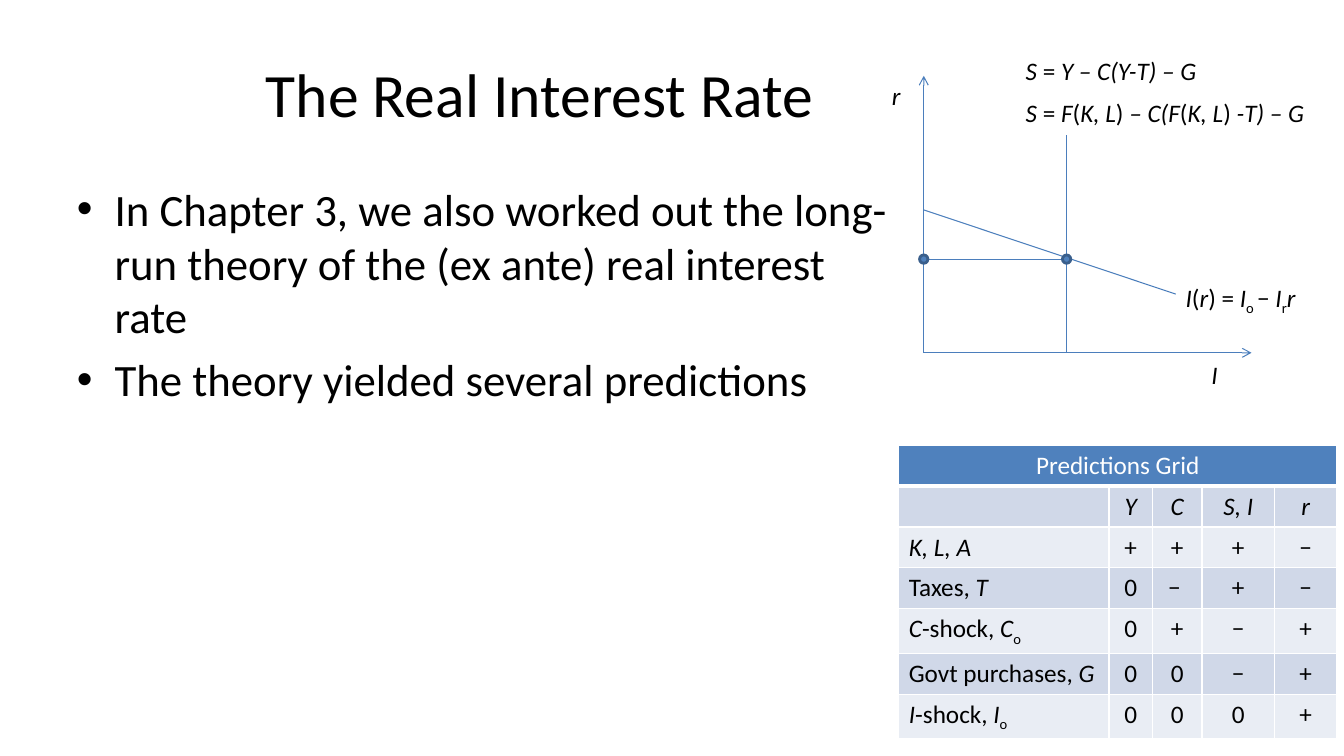
import pptx
import pptx.dml.color
import pptx.enum.shapes
import pptx.enum.text
import pptx.oxml
import pptx.oxml.ns
import pptx.util
from dataclasses import dataclass

Cm = pptx.util.Cm
Pt = pptx.util.Pt
Align = pptx.enum.text.PP_ALIGN
Anchor = pptx.enum.text.MSO_ANCHOR
NS = pptx.oxml.ns.nsdecls("a")


@dataclass(frozen=True)
class Theme:
    font: str = "Calibri"
    title: int = 44
    body: int = 32
    label: int = 18
    ink: str = "000000"
    white: str = "FFFFFF"
    line: str = "4B7EBC"
    fill: str = "4F81BD"
    edge: str = "3A5F8C"
    bands: tuple = ("D0D8E8", "E9EDF4")


theme = Theme()
rgb = pptx.dml.color.RGBColor.from_string


def write(para, text, size=theme.label, color=theme.ink, align=Align.LEFT):
    """Fill a paragraph; * switches italics and _ switches subscript."""
    para.alignment = align
    para.font.name = theme.font
    para.font.size = Pt(size)
    para.font.bold = False
    para.font.color.rgb = rgb(color)
    for i, part in enumerate(text.split("*")):
        for j, piece in enumerate(part.split("_")):
            if piece:
                run = para.add_run()
                run.text = piece
                if i % 2:
                    run.font.italic = True
                if j % 2:
                    run._r.get_or_add_rPr().set("baseline", "-25000")


def add_box(left, top, width, height):
    box = slide.shapes.add_textbox(Cm(left), Cm(top), Cm(width), Cm(height))
    box.text_frame.word_wrap = True
    return box.text_frame


deck = pptx.Presentation()
deck.slide_width, deck.slide_height = Cm(33.87), Cm(19.05)
slide = deck.slides.add_slide(deck.slide_layouts[6])

# Title
frame = add_box(1.69, 0.76, 23.83, 3.18)
frame.vertical_anchor = Anchor.MIDDLE
write(frame.paragraphs[0], "The Real Interest Rate", theme.title, align=Align.CENTER)

# Bullets
points = [
    "In Chapter 3, we also worked out the long-run theory of the (ex ante) real interest rate",
    "The theory yielded several predictions",
]
frame = add_box(1.69, 4.45, 20.96, 12.57)
for i, point in enumerate(points):
    para = frame.add_paragraph() if i else frame.paragraphs[0]
    write(para, point, theme.body)
    para.space_before = Pt(theme.body * 0.2)
    props = para._p.get_or_add_pPr()
    props.set("marL", str(Cm(0.95)))
    props.set("indent", str(Cm(-0.95)))
    props.find(pptx.oxml.ns.qn("a:defRPr")).addprevious(
        pptx.oxml.parse_xml(f'<a:buChar {NS} char="•"/>'))
    props.find(pptx.oxml.ns.qn("a:buChar")).addprevious(
        pptx.oxml.parse_xml(f'<a:buFont {NS} typeface="Arial"/>'))

# Graph lines: axes, investment, saving, market rate
left, base = 23.28, 8.89
save, rate = 26.88, 6.53
lines = [
    (left, base, 31.54, base, True),
    (left, base, left, 1.91, True),
    (left, 5.29, 29.63, 7.41, False),
    (save, base, save, 3.39, False),
    (save, rate, left, rate, False),
]
for x1, y1, x2, y2, arrow in lines:
    line = slide.shapes.add_connector(
        pptx.enum.shapes.MSO_CONNECTOR.STRAIGHT, Cm(x1), Cm(y1), Cm(x2), Cm(y2))
    line.line.color.rgb = rgb(theme.line)
    line.line.width = Pt(0.75)
    props = line._element.spPr
    if arrow:
        props.find(pptx.oxml.ns.qn("a:ln")).append(
            pptx.oxml.parse_xml(f'<a:tailEnd {NS} type="arrow"/>'))
    props.append(pptx.oxml.parse_xml(f"<a:effectLst {NS}/>"))

# Graph points
size = 0.21
for x in (left, save):
    dot = slide.shapes.add_shape(
        pptx.enum.shapes.MSO_SHAPE.OVAL,
        Cm(x - size / 2), Cm(rate - size / 2), Cm(size), Cm(size))
    dot.shadow.inherit = False
    dot.fill.solid()
    dot.fill.fore_color.rgb = rgb(theme.fill)
    dot.line.color.rgb = rgb(theme.edge)
    dot.line.width = Pt(2)

# Graph labels
labels = [
    (30.28, 8.92, 1.07, "*I*"),
    (22.23, 1.91, 1.07, "*r*"),
    (29.63, 6.99, 4.02, "*I*(*r*) =* I*_o _− *I*_r_*r*"),
    (25.6, 1.27, 6.78, "*S *=* Y – C(Y-T) – G*"),
    (25.6, 2.33, 7.83, "*S *=* F*(*K, L*)* – C(F*(*K, L*) *-T) – G*"),
]
for x, y, width, text in labels:
    write(add_box(x, y, width, 1.02).paragraphs[0], text)

# Predictions grid
rows = [
    ["Predictions Grid", "", "", "", ""],
    ["", "*Y*", "*C*", "*S, I*", "*r*"],
    ["*K, L, A*", "+", "+", "+", "−"],
    ["Taxes, *T*", "0", "− ", "+", "−"],
    ["*C*-shock, *C*_o_", "0", "+", "−", "+"],
    ["Govt purchases, *G*", "0", "0", "−", "+"],
    ["*I*-shock, *I*_o_", "0", "0", "0", "+"],
]
widths = [5.3, 1.09, 1.25, 1.83, 1.57]
high = 1.03
grid = slide.shapes.add_table(
    len(rows), len(widths), Cm(22.65), Cm(11.22),
    Cm(sum(widths)), Cm(high * len(rows))).table
for col, width in zip(grid.columns, widths):
    col.width = Cm(width)
for i, row in enumerate(rows):
    grid.rows[i].height = Cm(high)
    for j, text in enumerate(row):
        cell = grid.cell(i, j)
        write(cell.text_frame.paragraphs[0], text,
              color=theme.ink if i else theme.white,
              align=Align.CENTER if j or not i else Align.LEFT)
        cell.fill.solid()
        cell.fill.fore_color.rgb = rgb(theme.bands[(i - 1) % 2] if i else theme.fill)
        for k, side in enumerate("LRTB"):
            thick = Pt(3 if i == 0 and side == "B" else 1)
            cell._tc.get_or_add_tcPr().insert(k, pptx.oxml.parse_xml(
                f'<a:ln{side} {NS} w="{thick}"><a:solidFill>'
                f'<a:srgbClr val="{theme.white}"/></a:solidFill></a:ln{side}>'))
grid.cell(0, 0).merge(grid.cell(0, len(widths) - 1))

deck.save("out.pptx")
